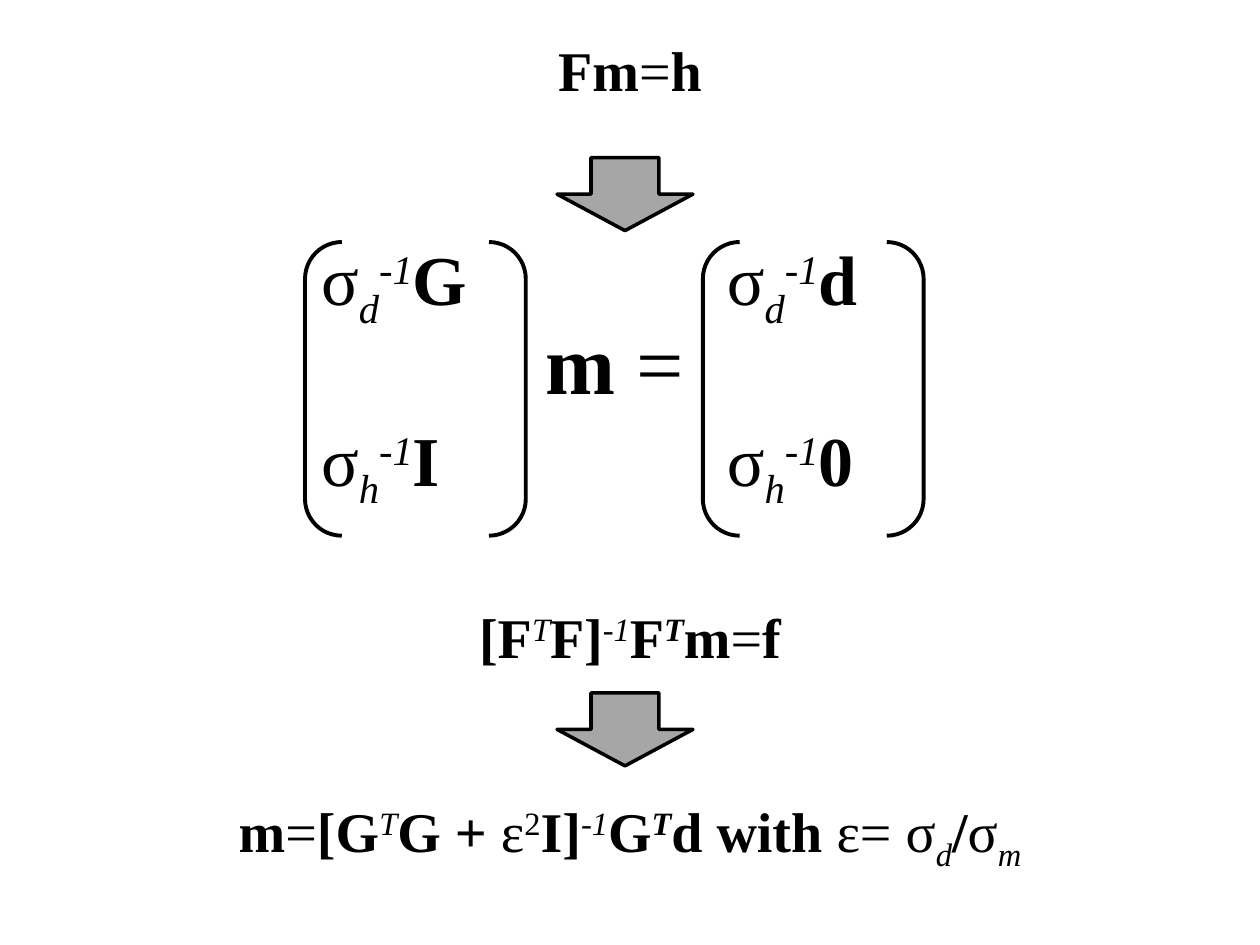
from pptx import Presentation
from pptx import util as u
from pptx.dml.color import RGBColor
from pptx.enum import shapes, text

COLORS = {"ink": "000000", "paper": "FFFFFF", "arrow": "A6A6A6"}
FONT = "Times New Roman"
SLIDE_WIDTH, SLIDE_HEIGHT = 25.4, 19.05
LINE_HEIGHT = 3.18

# Run styles: font attributes and baseline shift in percent
STYLES = {
    "plain": ({"bold": False, "italic": False}, 0),
    "bold": ({"bold": True, "italic": False}, 0),
    "super": ({"bold": False, "italic": True}, 30),
    "bold super": ({"bold": True, "italic": True}, 30),
    "power": ({"bold": False, "italic": False}, 30),
    "sub": ({"bold": False, "italic": True}, -25),
}

TRANSPOSE = ("T", "super")
BOLD_TRANSPOSE = ("T", "bold super")
INVERSE = ("-1", "super")

FORWARD = [("Fm", "bold"), ("=", "plain"), ("h", "bold")]
UNKNOWN = [("m", "bold"), (" =", "plain")]
LEAST_SQUARES = [
    ("[F", "bold"), TRANSPOSE, ("F]", "bold"), INVERSE, ("F", "bold"),
    BOLD_TRANSPOSE, ("m", "bold"), ("=", "plain"), ("f", "bold"),
]
SOLUTION = [
    ("m", "bold"), ("=", "plain"), ("[G", "bold"), TRANSPOSE,
    ("G + ", "bold"), ("ε", "plain"), ("2", "power"), ("I]", "bold"),
    INVERSE, ("G", "bold"), BOLD_TRANSPOSE, ("d with ", "bold"),
    ("ε= σ", "plain"), ("d", "sub"), ("/", "bold"), ("σ", "plain"),
    ("m", "sub"),
]


def color(name):
    return RGBColor.from_string(COLORS[name])


def box(left, top, width, height):
    return [u.Cm(value) for value in (left, top, width, height)]


def write_formula(frame, runs, size, alignment=text.PP_ALIGN.CENTER):
    paragraph = frame.paragraphs[0]
    paragraph.alignment = alignment
    for wording, style in runs:
        run = paragraph.add_run()
        run.text = wording
        attributes, baseline = STYLES[style]
        formats = {"name": FONT, "size": u.Pt(size), **attributes}
        for name, value in formats.items():
            setattr(run.font, name, value)
        run.font.color.rgb = color("ink")
        if baseline:
            run._r.get_or_add_rPr().set("baseline", str(baseline * 1000))


def format_frame(frame):
    formats = {
        "word_wrap": True,
        "auto_size": text.MSO_AUTO_SIZE.NONE,
        "vertical_anchor": text.MSO_ANCHOR.MIDDLE,
    }
    for name, value in formats.items():
        setattr(frame, name, value)


def add_title(slide, runs):
    title = slide.shapes.title
    place = box(0, -0.2, SLIDE_WIDTH, LINE_HEIGHT)
    for name, value in zip(("left", "top", "width", "height"), place):
        setattr(title, name, value)
    format_frame(title.text_frame)
    write_formula(title.text_frame, runs, 32)


def add_formula(slide, place, runs, size=32):
    frame = slide.shapes.add_textbox(*box(*place)).text_frame
    format_frame(frame)
    write_formula(frame, runs, size)
    return frame


def add_outlined(slide, kind, place, line_width, fill=None):
    shape = slide.shapes.add_shape(kind, *box(*place))
    shape.shadow.inherit = False
    shape.line.color.rgb = color("ink")
    shape.line.width = u.Pt(line_width)
    if fill:
        shape.fill.solid()
        shape.fill.fore_color.rgb = color(fill)
    else:
        shape.fill.background()


def add_column_vector(slide, table_left, bracket_left, entries):
    place = box(table_left, 4.78, 4.65, 7.28)
    table = slide.shapes.add_table(len(entries), 1, *place).table
    for row, (index, symbol) in enumerate(entries):
        cell = table.cell(row, 0)
        cell.fill.solid()
        cell.fill.fore_color.rgb = color("paper")
        runs = [("σ", "plain"), (index, "sub"), INVERSE, (symbol, "bold")]
        write_formula(cell.text_frame, runs, 40, text.PP_ALIGN.LEFT)
    add_outlined(slide, shapes.MSO_SHAPE.DOUBLE_BRACKET,
                 (bracket_left, 4.88, 4.45, 5.92), 2.25)


def main():
    presentation = Presentation()
    presentation.slide_width = u.Cm(SLIDE_WIDTH)
    presentation.slide_height = u.Cm(SLIDE_HEIGHT)
    slide = presentation.slides.add_slide(presentation.slide_layouts[5])

    # Weighted system: column vectors around the unknown
    add_column_vector(slide, 6.22, 6.15, [("d", "G"), ("h", "I")])
    add_column_vector(slide, 14.4, 14.17, [("d", "d"), ("h", "0")])
    add_formula(slide, (10.59, 4.01, 3.6, 6.55), UNKNOWN, 48)

    # Starting equation
    add_title(slide, FORWARD)

    # Arrows between the steps
    for top in (3.18, 13.97):
        add_outlined(slide, shapes.MSO_SHAPE.DOWN_ARROW,
                     (11.23, top, 2.74, 1.47), 2, "arrow")

    # Least-squares equation and its solution, the latter set high in its box
    add_formula(slide, (0, 11.23, SLIDE_WIDTH, LINE_HEIGHT), LEAST_SQUARES)
    solution = add_formula(
        slide, (0, 15.88, SLIDE_WIDTH, LINE_HEIGHT), SOLUTION)
    solution.margin_bottom = u.Cm(1.42)

    presentation.save("out.pptx")


if __name__ == "__main__":
    main()
